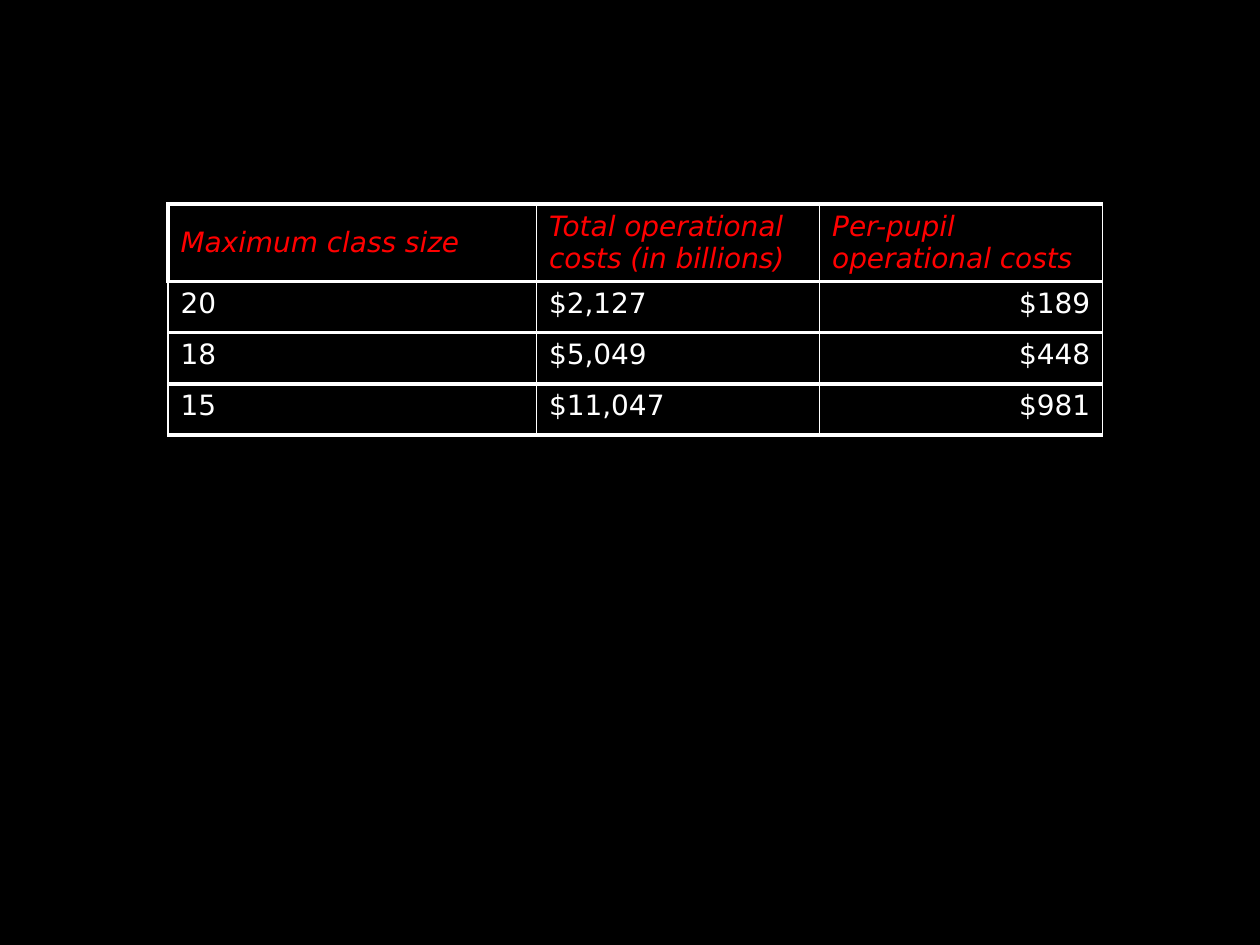
from lxml import etree
from pptx import Presentation
from pptx.dml.color import RGBColor
from pptx.enum import text
from pptx.oxml import ns
from pptx.util import Pt

HEADINGS = ["Maximum class size", "Total operational costs (in billions)", "Per-pupil operational costs"]
COSTS = [
    ["20", "$2,127", "$189"],
    ["18", "$5,049", "$448"],
    ["15", "$11,047", "$981"],
]

BLACK = RGBColor(0, 0, 0)
WHITE = RGBColor(255, 255, 255)
RED = RGBColor(255, 0, 0)

LEFT, TOP = 96, 116.6
COLUMN_WIDTHS = [210.6, 161.8, 161.8]
HEADING_HEIGHT, COST_HEIGHT = 44, 29.3
THIN, THICK = 1, 2.25
HEADING_FONT = {"name": "DejaVu Sans", "size": Pt(16), "italic": True}
COST_FONT = {**HEADING_FONT, "italic": False}


def add_borders(cell, widths):
    """Draw white borders; widths maps a side (L, R, T, B) to points."""
    properties = cell._tc.get_or_add_tcPr()
    for position, (side, width) in enumerate(widths.items()):
        line = etree.Element(ns.qn(f"a:ln{side}"), w=str(Pt(width)))
        fill = etree.SubElement(line, ns.qn("a:solidFill"))
        etree.SubElement(fill, ns.qn("a:srgbClr"), val=str(WHITE))
        properties.insert(position, line)


def fill_cell(cell, words, font, color, anchor, align):
    cell.fill.solid()
    cell.fill.fore_color.rgb = BLACK
    cell.vertical_anchor = anchor
    para = cell.text_frame.paragraphs[0]
    para.alignment = align
    span = para.add_run()
    span.text = words
    for name, value in font.items():
        setattr(span.font, name, value)
    span.font.color.rgb = color


deck = Presentation()
deck.slide_width, deck.slide_height = Pt(720), Pt(540)
page = deck.slides.add_slide(deck.slide_layouts[6])
page.background.fill.solid()
page.background.fill.fore_color.rgb = BLACK

rows = [HEADINGS] + COSTS
heights = [HEADING_HEIGHT] + [COST_HEIGHT] * len(COSTS)
table = page.shapes.add_table(
    len(rows), len(HEADINGS), Pt(LEFT), Pt(TOP), Pt(sum(COLUMN_WIDTHS)), Pt(sum(heights))
).table
for column, width in zip(table.columns, COLUMN_WIDTHS):
    column.width = Pt(width)

for r, (row, height) in enumerate(zip(rows, heights)):
    table.rows[r].height = Pt(height)
    heading = r == 0
    for c, words in enumerate(row):
        cell = table.cell(r, c)
        fill_cell(
            cell,
            words,
            HEADING_FONT if heading else COST_FONT,
            RED if heading else WHITE,
            text.MSO_ANCHOR.MIDDLE if heading else text.MSO_ANCHOR.TOP,
            text.PP_ALIGN.RIGHT if c == 2 and not heading else text.PP_ALIGN.LEFT,
        )
        left = THICK if heading and c == 0 else THIN
        add_borders(cell, {"L": left, "R": THIN, "T": THICK, "B": THICK})

deck.save("out.pptx")
